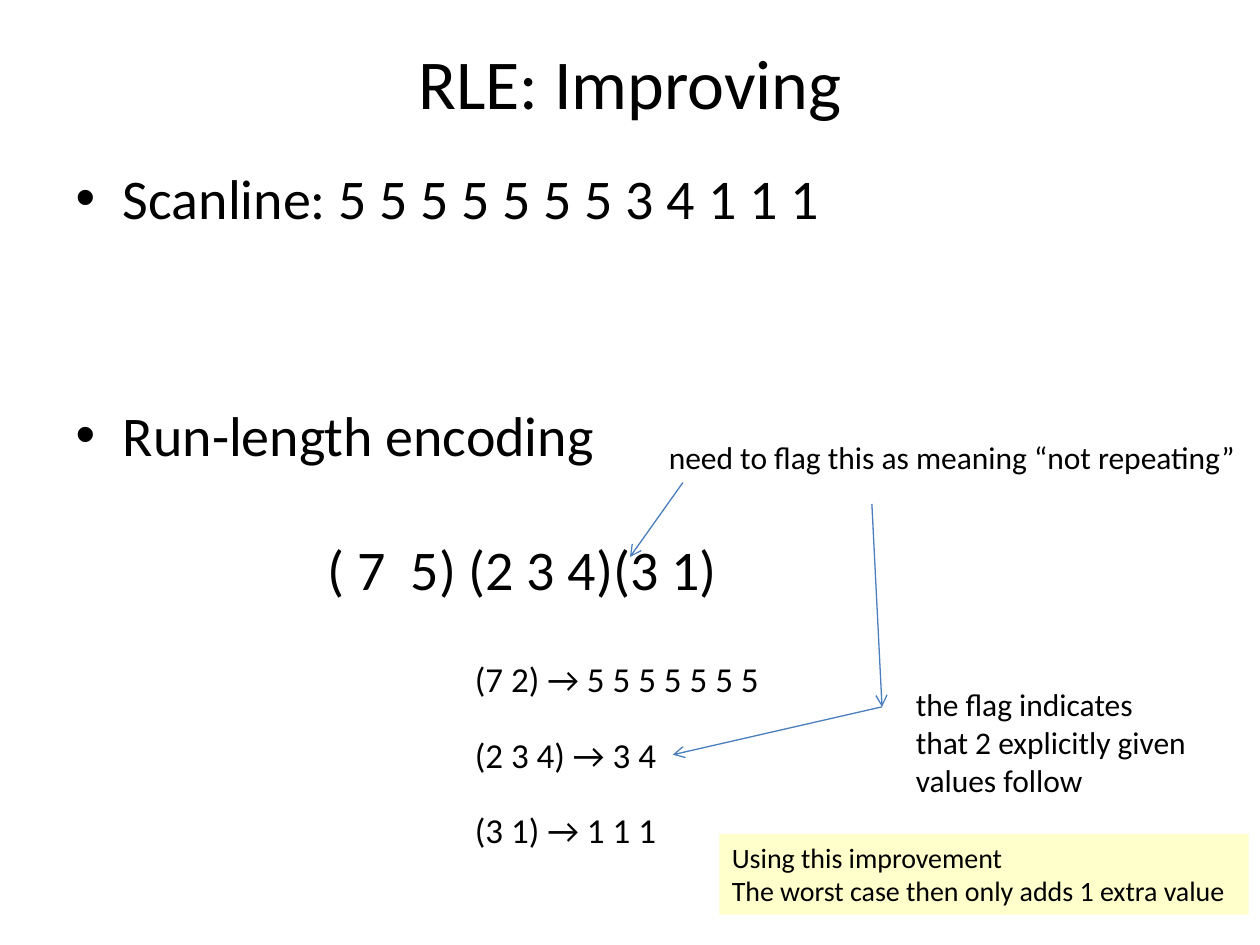
from dataclasses import dataclass

from lxml.etree import SubElement
from pptx import Presentation
from pptx.dml.color import RGBColor
from pptx.enum.shapes import MSO_CONNECTOR, MSO_SHAPE
from pptx.enum.text import MSO_ANCHOR, MSO_AUTO_SIZE, PP_ALIGN
from pptx.oxml.ns import qn
from pptx.util import Inches, Pt

FONT = "Calibri"
BLACK = "000000"
ARROW_BLUE = "4B7EBC"
PALE_YELLOW = "FFFFCC"


@dataclass
class Note:
    text: str
    left: float
    top: float
    width: float
    height: float
    size: int


@dataclass
class Arrow:
    start: tuple[float, float]
    end: tuple[float, float]


DECODE_LEFT, DECODE_TOP, DECODE_STEP = 3.67, 5.17, 0.6
DECODINGS = [
    ("(7 2) → 5 5 5 5 5 5 5", 2.49),
    ("(2 3 4) → 3 4", 1.67),
    ("(3 1) → 1 1 1", 1.67),
]
NOTES = [
    Note("need to flag this as meaning “not repeating”", 5.21, 3.43, 4.74, 0.4, 18),
    Note("the flag indicates\nthat 2 explicitly given\nvalues follow", 7.17, 5.39, 2.37, 1.01, 18),
] + [
    Note(text, DECODE_LEFT, DECODE_TOP + i * DECODE_STEP, width, 0.44, 20)
    for i, (text, width) in enumerate(DECODINGS)
]
CONCLUSION = Note(
    "Using this improvement\nThe worst case then only adds 1 extra value", 5.71, 6.62, 4.2, 0.64, 16
)
FLAG_CORNER = (7, 5.61)
ARROWS = [
    Arrow((5.42, 3.83), (5, 4.42)),
    Arrow(FLAG_CORNER, (5.34, 5.99)),
    Arrow((6.92, 4), FLAG_CORNER),
]


def rgb(color: str) -> RGBColor:
    return RGBColor.from_string(color)


def place(sp, left: float, top: float, width: float, height: float) -> None:
    sp.left, sp.top = Inches(left), Inches(top)
    sp.width, sp.height = Inches(width), Inches(height)


def format_text(tf, size: int) -> None:
    for p in tf.paragraphs:
        for r in p.runs:
            r.font.name = FONT
            r.font.size = Pt(size)
            r.font.color.rgb = rgb(BLACK)


def fill_title(sp) -> None:
    place(sp, 0.5, 0.3, 9, 0.7)
    tf = sp.text_frame
    tf.text = "RLE: Improving"
    tf.auto_size = MSO_AUTO_SIZE.NONE
    format_text(tf, 40)


def fill_body(sp) -> None:
    """Write the two bullets and the indented code, spaced by paragraph spacing."""
    place(sp, 0.5, 1.25, 9, 5.45)
    tf = sp.text_frame
    tf.text = "Scanline: 5 5 5 5 5 5 5 3 4 1 1 1\nRun-length encoding\n( 7  5) (2 3 4)(3 1)"
    tf.auto_size = MSO_AUTO_SIZE.NONE
    format_text(tf, 32)
    _, encoding, code = tf.paragraphs
    encoding.space_before = Pt(97)
    code.space_before = Pt(38)
    pPr = code._p.get_or_add_pPr()
    pPr.set("marL", str(Inches(2)))
    pPr.set("indent", "0")
    SubElement(pPr, qn("a:buNone"))


def add_note(s, note: Note) -> None:
    sp = s.shapes.add_textbox(0, 0, 0, 0)
    place(sp, note.left, note.top, note.width, note.height)
    tf = sp.text_frame
    tf.text = note.text
    tf.word_wrap = False
    tf.auto_size = MSO_AUTO_SIZE.SHAPE_TO_FIT_TEXT
    format_text(tf, note.size)


def add_callout(s, note: Note, fill: str) -> None:
    sp = s.shapes.add_shape(MSO_SHAPE.RECTANGLE, 0, 0, 0, 0)
    place(sp, note.left, note.top, note.width, note.height)
    sp.shadow.inherit = False
    sp.fill.solid()
    sp.fill.fore_color.rgb = rgb(fill)
    sp.line.fill.background()
    tf = sp.text_frame
    tf.text = note.text
    tf.word_wrap = True
    tf.auto_size = MSO_AUTO_SIZE.SHAPE_TO_FIT_TEXT
    tf.vertical_anchor = MSO_ANCHOR.TOP
    for p in tf.paragraphs:
        p.alignment = PP_ALIGN.LEFT
    format_text(tf, note.size)


def add_arrow(s, arrow: Arrow) -> None:
    points = [Inches(v) for v in (*arrow.start, *arrow.end)]
    line = s.shapes.add_connector(MSO_CONNECTOR.STRAIGHT, *points)
    line.line.color.rgb = rgb(ARROW_BLUE)
    line.line.width = Pt(0.75)
    SubElement(line.line._get_or_add_ln(), qn("a:tailEnd"), type="arrow")
    SubElement(line._element.spPr, qn("a:effectLst"))


def main() -> None:
    prs = Presentation()
    prs.slide_width, prs.slide_height = Inches(10), Inches(7.5)
    s = prs.slides.add_slide(prs.slide_layouts.get_by_name("Title and Content"))
    fill_title(s.shapes.title)
    fill_body(s.placeholders[1])
    for arrow in ARROWS:
        add_arrow(s, arrow)
    for note in NOTES:
        add_note(s, note)
    add_callout(s, CONCLUSION, PALE_YELLOW)
    prs.save("out.pptx")


if __name__ == "__main__":
    main()
